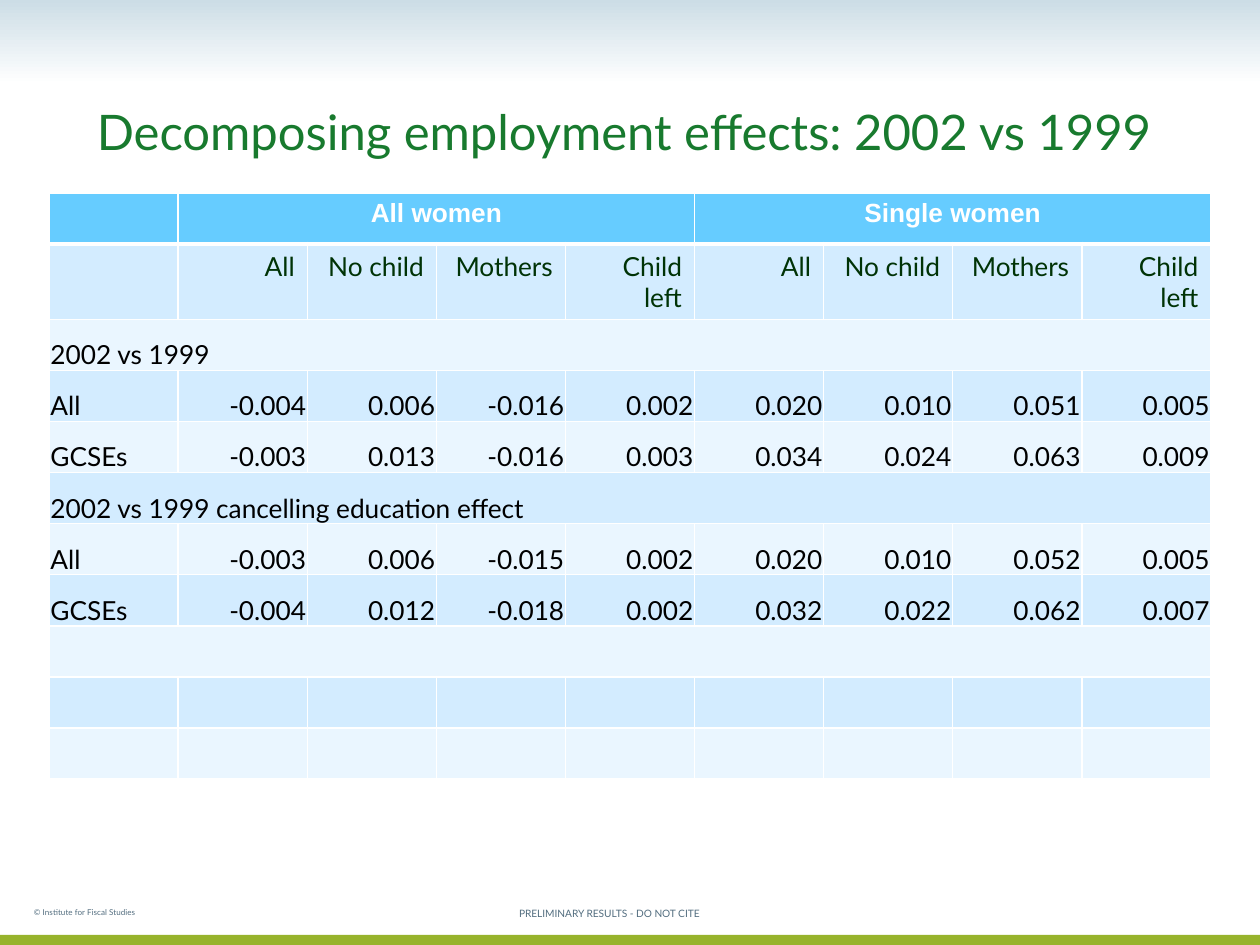
from dataclasses import dataclass
from lxml import etree
from pptx import Presentation
from pptx.dml.color import RGBColor
from pptx.enum.shapes import MSO_SHAPE
from pptx.enum.text import MSO_ANCHOR, PP_ALIGN
from pptx.oxml.ns import qn
from pptx.util import Inches, Pt

RECT = MSO_SHAPE.RECTANGLE
TOP, MIDDLE, BOTTOM = MSO_ANCHOR.TOP, MSO_ANCHOR.MIDDLE, MSO_ANCHOR.BOTTOM
LEFT, CENTER, RIGHT = PP_ALIGN.LEFT, PP_ALIGN.CENTER, PP_ALIGN.RIGHT


@dataclass(frozen=True)
class Theme:
    body: str = "Lato"
    head: str = "Arial"
    green: str = "187A2E"
    dark: str = "003306"
    black: str = "000000"
    white: str = "FFFFFF"
    gray: str = "526D7F"
    sky: str = "CCDDE6"
    lime: str = "97B32C"
    blue: str = "66CCFF"
    bands: tuple = ("EAF6FF", "D3ECFF")
    title: int = 28
    cell: int = 15
    note: int = 10
    small: int = 8


THEME = Theme()
GROUPS = ["All women", "Single women"]
HEADS = ["All", "No child", "Mothers", "Child left"]
COLS = 1 + len(GROUPS) * len(HEADS)
BODY = [
    ["2002 vs 1999"],
    ["All", "-0.004", "0.006", "-0.016", "0.002", "0.020", "0.010", "0.051", "0.005"],
    ["GCSEs", "-0.003", "0.013", "-0.016", "0.003", "0.034", "0.024", "0.063", "0.009"],
    ["2002 vs 1999 cancelling education effect"],
    ["All", "-0.003", "0.006", "-0.015", "0.002", "0.020", "0.010", "0.052", "0.005"],
    ["GCSEs", "-0.004", "0.012", "-0.018", "0.002", "0.032", "0.022", "0.062", "0.007"],
    [""],
    [""] * COLS,
    [""] * COLS,
]


def rgb(color):
    return RGBColor.from_string(color)


def add_run(para, text, size, color, font=THEME.body, bold=False):
    run = para.add_run()
    run.text = text
    run.font.name = font
    run.font.size = Pt(size)
    run.font.bold = bold
    run.font.color.rgb = rgb(color)
    return run


def add_bar(slide, top, height):
    bar = slide.shapes.add_shape(RECT, 0, Inches(top), Inches(10), Inches(height))
    bar.shadow.inherit = False
    bar.line.fill.background()
    return bar.fill


def add_bars(slide):
    fade = add_bar(slide, 0, 0.67)
    fade.gradient()
    fade.gradient_angle = 270
    for stop, color in zip(fade.gradient_stops, (THEME.sky, THEME.white)):
        stop.color.rgb = rgb(color)
    base = add_bar(slide, 7.42, 0.08)
    base.solid()
    base.fore_color.rgb = rgb(THEME.lime)


def add_text(slide, spot, text, size, color, anchor=TOP, align=LEFT):
    box = slide.shapes.add_textbox(*map(Inches, spot))
    frame = box.text_frame
    frame.word_wrap = True
    frame.vertical_anchor = anchor
    para = frame.paragraphs[0]
    para.alignment = align
    return para, add_run(para, text, size, color)


def add_note(slide, spot, text, size, anchor=TOP, align=LEFT):
    _, run = add_text(slide, spot, text, size, THEME.gray, anchor, align)
    run.font._element.set("baseline", "-25000")


def set_edge(cell, side, width):
    props = cell._tc.get_or_add_tcPr()
    line = etree.SubElement(props, qn("a:ln" + side), w=str(Pt(width)))
    fill = etree.SubElement(line, qn("a:solidFill"))
    etree.SubElement(fill, qn("a:srgbClr"), val=THEME.white)


def style_cell(cell, row):
    wide = {0: "B", 1: "T"}.get(row)
    for side in "LRTB":
        set_edge(cell, side, 3 if side == wide else 1)
    cell.fill.solid()
    cell.fill.fore_color.rgb = rgb(THEME.bands[row % 2] if row else THEME.blue)


def fill_cell(cell, text, align, color, font=THEME.body, bold=False):
    para = cell.text_frame.paragraphs[0]
    para.alignment = align
    add_run(para, text, THEME.cell, color, font, bold)


def fill_head(table):
    span = len(HEADS)
    for i, group in enumerate(GROUPS):
        first = 1 + i * span
        cell = table.cell(0, first)
        cell.merge(table.cell(0, first + span - 1))
        fill_cell(cell, group, CENTER, THEME.white, THEME.head, True)
        for j, head in enumerate(HEADS):
            fill_cell(table.cell(1, first + j), head, RIGHT, THEME.dark)


def fill_body(table):
    for row, items in enumerate(BODY, 2):
        if len(items) == 1:
            table.cell(row, 0).merge(table.cell(row, COLS - 1))
        for col, text in enumerate(items):
            if not text:
                continue
            cell = table.cell(row, col)
            cell.vertical_anchor = BOTTOM
            cell.margin_left = cell.margin_right = cell.margin_top = Inches(0.01)
            cell.margin_bottom = 0
            fill_cell(cell, text, RIGHT if col else LEFT, THEME.black)


def add_grid(slide):
    spot = map(Inches, (0.39, 1.53, 9.22, 4.46))
    table = slide.shapes.add_table(len(BODY) + 2, COLS, *spot).table
    table.horz_banding = False
    for row in range(len(table.rows)):
        for col in range(COLS):
            style_cell(table.cell(row, col), row)
    fill_head(table)
    fill_body(table)


def main():
    deck = Presentation()
    deck.slide_width, deck.slide_height = Inches(10), Inches(7.5)
    slide = deck.slides.add_slide(deck.slide_layouts[6])
    add_bars(slide)
    add_grid(slide)
    para, _ = add_text(slide, (0.67, 0.25, 8.58, 1.08),
                       "Decomposing employment effects: 2002 vs 1999",
                       THEME.title, THEME.green, BOTTOM)
    para.line_spacing = 0.9
    add_note(slide, (0.17, 7.08, 2.75, 0.25),
             "© Institute for Fiscal Studies", THEME.small)
    add_note(slide, (3.25, 7.08, 3.17, 0.25),
             "PRELIMINARY RESULTS - DO NOT CITE", THEME.note, MIDDLE, CENTER)
    deck.save("out.pptx")


if __name__ == "__main__":
    main()
